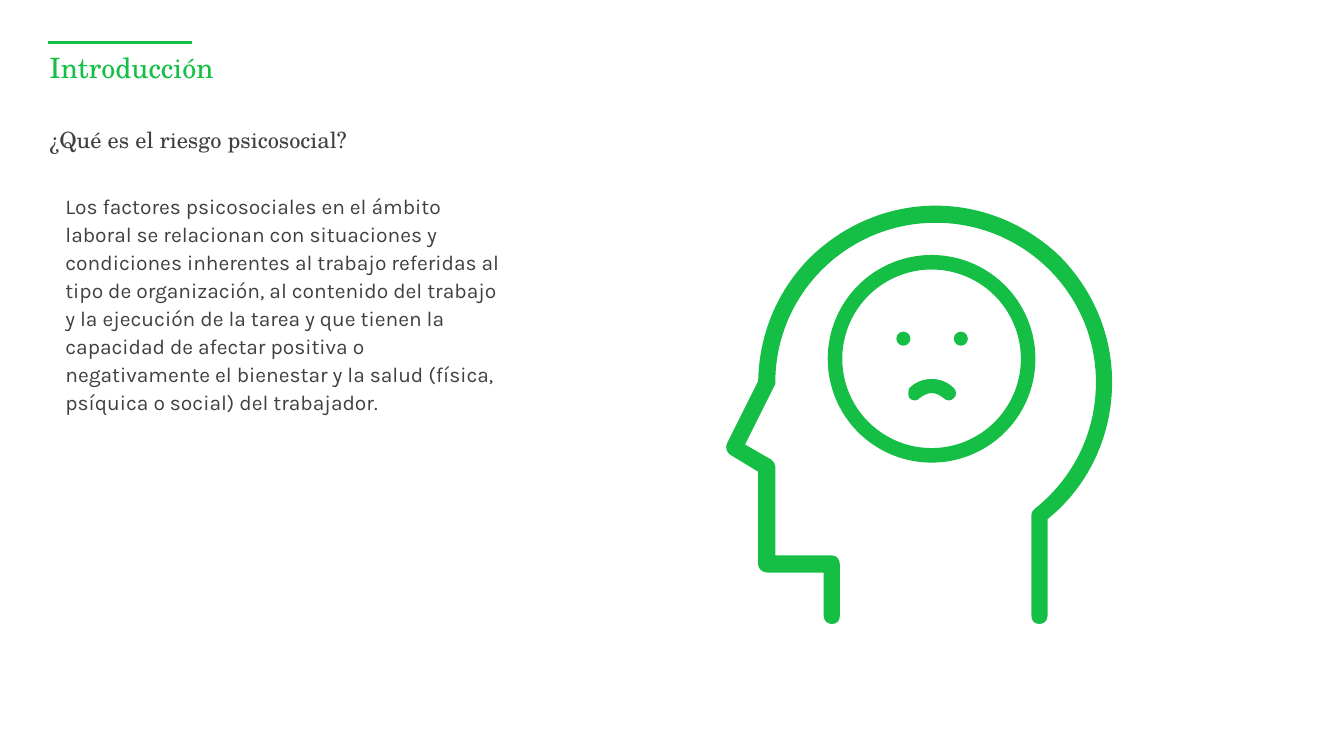
import dataclasses

import pptx
import pptx.dml.color
import pptx.enum.shapes
import pptx.enum.text
import pptx.oxml.ns
import pptx.util
from lxml import etree

Inches, Pt = pptx.util.Inches, pptx.util.Pt
MSO_SHAPE = pptx.enum.shapes.MSO_SHAPE
qn = pptx.oxml.ns.qn


@dataclasses.dataclass(frozen=True)
class Theme:
    green: str = "15BF45"
    ink: str = "404040"
    heading_font: str = "TeX Gyre Schola"
    body_font: str = "Karla"
    title_size: int = 20
    subtitle_size: int = 16
    body_size: int = 15
    rule_width: float = 1.75


# Outline steps: two numbers draw a line, six draw a Bézier curve.
HEAD = [
    (7.21, 4.4), (7.52, 3.78),
    (7.53, 3.31, 7.71, 2.88, 8.04, 2.55), (8.37, 2.23, 8.81, 2.04, 9.28, 2.04),
    (9.75, 2.04, 10.19, 2.23, 10.52, 2.55), (10.85, 2.89, 11.03, 3.33, 11.03, 3.79),
    (11.03, 4.32, 10.8, 4.82, 10.39, 5.15), (10.39, 6.11),
    (10.39, 6.16, 10.35, 6.19, 10.31, 6.19), (10.26, 6.19, 10.23, 6.16, 10.23, 6.11),
    (10.23, 5.11), (10.23, 5.09, 10.24, 5.06, 10.26, 5.05),
    (10.65, 4.74, 10.87, 4.29, 10.87, 3.79), (10.87, 2.92, 10.16, 2.21, 9.28, 2.21),
    (8.4, 2.21, 7.69, 2.92, 7.69, 3.79), (7.69, 3.81, 7.69, 3.82, 7.68, 3.83),
    (7.39, 4.41), (7.65, 4.56), (7.67, 4.57, 7.69, 4.6, 7.69, 4.63),
    (7.69, 5.51), (8.25, 5.51), (8.3, 5.51, 8.33, 5.55, 8.33, 5.6),
    (8.33, 6.11), (8.33, 6.16, 8.3, 6.19, 8.25, 6.19),
    (8.21, 6.19, 8.17, 6.16, 8.17, 6.11), (8.17, 5.68), (7.61, 5.68),
    (7.56, 5.68, 7.52, 5.64, 7.52, 5.6), (7.52, 4.68), (7.24, 4.51),
    (7.21, 4.49, 7.19, 4.44, 7.21, 4.4),
]
FROWN = [
    (9.24, 3.76), (9.32, 3.76, 9.4, 3.79, 9.46, 3.85),
    (9.49, 3.88, 9.49, 3.92, 9.46, 3.95), (9.43, 3.98, 9.39, 3.98, 9.36, 3.95),
    (9.32, 3.92, 9.29, 3.9, 9.24, 3.9), (9.2, 3.9, 9.16, 3.92, 9.12, 3.95),
    (9.1, 3.98, 9.05, 3.98, 9.02, 3.95), (9.01, 3.94, 9.01, 3.92, 9.01, 3.9),
    (9.01, 3.88, 9.01, 3.86, 9.02, 3.85), (9.08, 3.79, 9.16, 3.76, 9.24, 3.76),
]


def rgb(color):
    return pptx.dml.color.RGBColor.from_string(color)


def bend(sp, steps):
    """Turn the straight segments of a freeform into the curves its steps ask for."""
    segments = list(sp._element.iter(qn("a:lnTo")))
    for segment, step in zip(segments, steps[1:]):
        if len(step) == 6:
            curve = etree.Element(qn("a:cubicBezTo"))
            for x, y in zip(step[::2], step[1::2]):
                etree.SubElement(curve, qn("a:pt"),
                                 x=str(Inches(x) - sp.left), y=str(Inches(y) - sp.top))
            segment.getparent().replace(segment, curve)


def write(tf, text, *, font, size, color, spacing):
    """Fill a text frame with one left-aligned, unbulleted paragraph."""
    tf.word_wrap = True
    tf.vertical_anchor = pptx.enum.text.MSO_ANCHOR.TOP
    p = tf.paragraphs[0]
    r = p.add_run()
    r.text = text
    pPr = p._p.get_or_add_pPr()
    pPr.set("marL", "0")
    pPr.set("indent", "0")
    etree.SubElement(pPr, qn("a:buNone"))
    p.alignment = pptx.enum.text.PP_ALIGN.LEFT
    p.line_spacing = spacing
    p.space_before = Pt(0)
    r.font.name = font
    r.font.size = Pt(size)
    r.font.color.rgb = rgb(color)


class SlideBuilder:
    def __init__(self, s, theme):
        self.s = s
        self.theme = theme

    def rule(self, x1, x2, y):
        line = self.s.shapes.add_connector(
            pptx.enum.shapes.MSO_CONNECTOR.STRAIGHT,
            Inches(x1), Inches(y), Inches(x2), Inches(y))
        line.line.color.rgb = rgb(self.theme.green)
        line.line.width = Pt(self.theme.rule_width)
        etree.SubElement(line._element.spPr, qn("a:effectLst"))

    def placeholder(self, sp, top, height, text, size, color):
        sp.left, sp.top = Inches(0.49), Inches(top)
        sp.width, sp.height = Inches(10.79), Inches(height)
        tf = sp.text_frame
        tf.auto_size = pptx.enum.text.MSO_AUTO_SIZE.NONE
        tf.margin_left = tf.margin_right = tf.margin_top = tf.margin_bottom = 0
        write(tf, text, font=self.theme.heading_font, size=size, color=color, spacing=0.9)

    def paragraph(self, x, y, w, h, text):
        sp = self.s.shapes.add_textbox(Inches(x), Inches(y), Inches(w), Inches(h))
        sp.text_frame.auto_size = pptx.enum.text.MSO_AUTO_SIZE.SHAPE_TO_FIT_TEXT
        write(sp.text_frame, text, font=self.theme.body_font, size=self.theme.body_size,
              color=self.theme.ink, spacing=Pt(20))

    def paint(self, sp):
        sp.shadow.inherit = False
        sp.fill.solid()
        sp.fill.fore_color.rgb = rgb(self.theme.green)
        sp.line.fill.background()
        return sp

    def outline(self, group, steps):
        corners = [(Inches(step[-2]), Inches(step[-1])) for step in steps]
        builder = group.shapes.build_freeform(*corners[0], scale=1.0)
        builder.add_line_segments(corners[1:], close=True)
        bend(self.paint(builder.convert_to_shape()), steps)

    def round_shape(self, group, kind, cx, cy, diameter):
        return self.paint(group.shapes.add_shape(
            kind, Inches(cx - diameter / 2), Inches(cy - diameter / 2),
            Inches(diameter), Inches(diameter)))

    def worried_head(self):
        group = self.s.shapes.add_group_shape()
        self.outline(group, HEAD)
        face = self.round_shape(group, MSO_SHAPE.DONUT, 9.24, 3.56, 2.06)
        face.adjustments[0] = 0.07
        for eye_x in (8.96, 9.53):
            self.round_shape(group, MSO_SHAPE.OVAL, eye_x, 3.36, 0.14)
        self.outline(group, FROWN)


def main():
    prs = pptx.Presentation()
    prs.slide_width, prs.slide_height = Inches(13.33), Inches(7.5)
    s = prs.slides.add_slide(prs.slide_layouts[1])
    theme = Theme()
    slide = SlideBuilder(s, theme)
    slide.rule(0.48, 1.9, 0.42)
    slide.placeholder(s.shapes.title, 0.54, 0.57, "Introducción",
                      theme.title_size, theme.green)
    slide.placeholder(s.placeholders[1], 1.28, 0.39, "¿Qué es el riesgo psicosocial?",
                      theme.subtitle_size, theme.ink)
    slide.paragraph(
        0.55, 1.84, 4.58, 2.32,
        "Los factores psicosociales en el ámbito laboral se relacionan con situaciones y "
        "condiciones inherentes al trabajo referidas al tipo de organización, al contenido "
        "del trabajo y la ejecución de la tarea y que tienen la capacidad de afectar positiva "
        "o negativamente el bienestar y la salud (física, psíquica o social) del trabajador.")
    slide.worried_head()
    prs.save("out.pptx")


if __name__ == "__main__":
    main()
